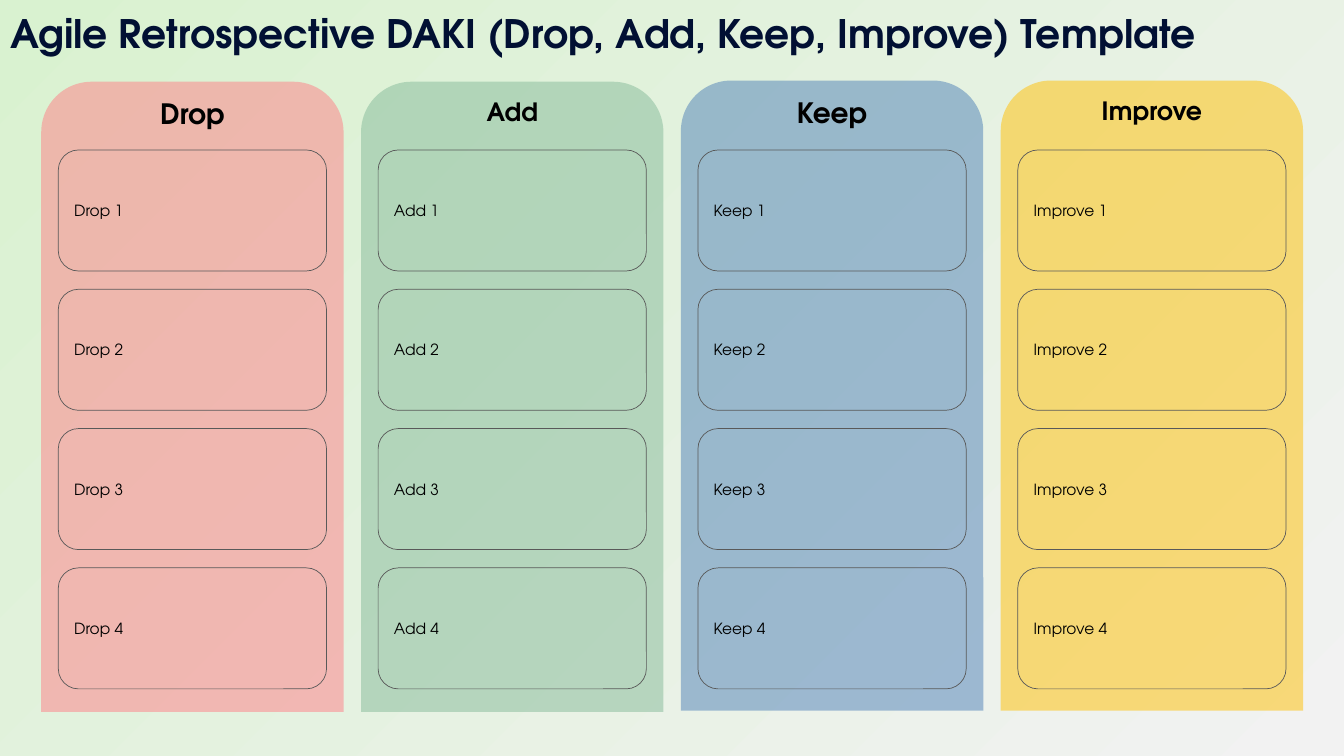
from lxml.etree import SubElement
from pptx import Presentation
from pptx.dml.color import RGBColor
from pptx.enum.shapes import MSO_SHAPE
from pptx.enum.text import MSO_ANCHOR, MSO_AUTO_SIZE, PP_ALIGN
from pptx.oxml.ns import qn
from pptx.util import Cm, Pt

FONT = "TeX Gyre Adventor"
COLORS = {
    "title": "011033", "text": "000000", "outline": "595959",
    "bg_start": "F2F2F2", "bg_end": "D9F2D0",
    "Drop": "FF7D86", "Add": "84BA99", "Keep": "4D7FB7", "Improve": "FFC000",
}
# heading, top in cm, heading size in points
COLUMNS = [("Drop", 2.06, 20), ("Add", 2.06, 18), ("Keep", 2.03, 20), ("Improve", 2.03, 18)]
COLUMN_LEFT, COLUMN_STEP, COLUMN_WIDTH, COLUMN_HEIGHT = 1.04, 8.06, 7.62, 15.88
CARD_TOP, CARD_STEP, CARD_WIDTH, CARD_HEIGHT = 3.78, 3.51, 6.76, 3.05
CARDS_PER_COLUMN = 4


def color(name):
    return RGBColor.from_string(COLORS[name])


def write(shape, text, size, color_name, align, anchor, bold=False):
    frame = shape.text_frame
    frame.word_wrap = True
    frame.vertical_anchor = anchor
    frame.text = text
    paragraph = frame.paragraphs[0]
    paragraph.alignment = align
    paragraph.font.name = FONT
    paragraph.font.size = Pt(size)
    paragraph.font.bold = bold
    paragraph.font.color.rgb = color(color_name)


prs = Presentation()
prs.slide_width, prs.slide_height = Cm(33.87), Cm(19.05)
slide = prs.slides.add_slide(prs.slide_layouts[5])

backdrop = slide.background.fill
backdrop.gradient()
backdrop.gradient_angle = 135
for stop, name in zip(backdrop.gradient_stops, ("bg_start", "bg_end")):
    stop.color.rgb = color(name)
backdrop.gradient_stops[0].position = 0
backdrop.gradient_stops[1].position = 1

title = slide.shapes.title
title.left, title.top, title.width, title.height = Cm(0), Cm(0.1), Cm(33.87), Cm(1.45)
write(title, "Agile Retrospective DAKI (Drop, Add, Keep, Improve) Template",
      28, "title", PP_ALIGN.LEFT, MSO_ANCHOR.TOP, bold=True)
title.text_frame.auto_size = MSO_AUTO_SIZE.SHAPE_TO_FIT_TEXT

for i, (heading, top, heading_size) in enumerate(COLUMNS):
    left = COLUMN_LEFT + i * COLUMN_STEP
    column = slide.shapes.add_shape(
        MSO_SHAPE.ROUND_2_SAME_RECTANGLE,
        Cm(left), Cm(top), Cm(COLUMN_WIDTH), Cm(COLUMN_HEIGHT))
    column.shadow.inherit = False
    column.line.fill.background()
    column.fill.solid()
    column.fill.fore_color.rgb = color(heading)
    tint = column.fill._xPr.find(qn("a:solidFill"))[0]
    SubElement(tint, qn("a:alpha")).set("val", "50000")
    column.text_frame.margin_top = 0
    write(column, heading, heading_size, "text", PP_ALIGN.CENTER, MSO_ANCHOR.TOP, bold=True)

    card_left = left + (COLUMN_WIDTH - CARD_WIDTH) / 2
    for row in range(CARDS_PER_COLUMN):
        card = slide.shapes.add_shape(
            MSO_SHAPE.ROUNDED_RECTANGLE,
            Cm(card_left), Cm(CARD_TOP + row * CARD_STEP), Cm(CARD_WIDTH), Cm(CARD_HEIGHT))
        card.shadow.inherit = False
        card.fill.background()
        card.line.color.rgb = color("outline")
        card.line.width = Pt(0.5)
        write(card, f"{heading} {row + 1}", 11, "text", PP_ALIGN.LEFT, MSO_ANCHOR.MIDDLE)

prs.save("out.pptx")
